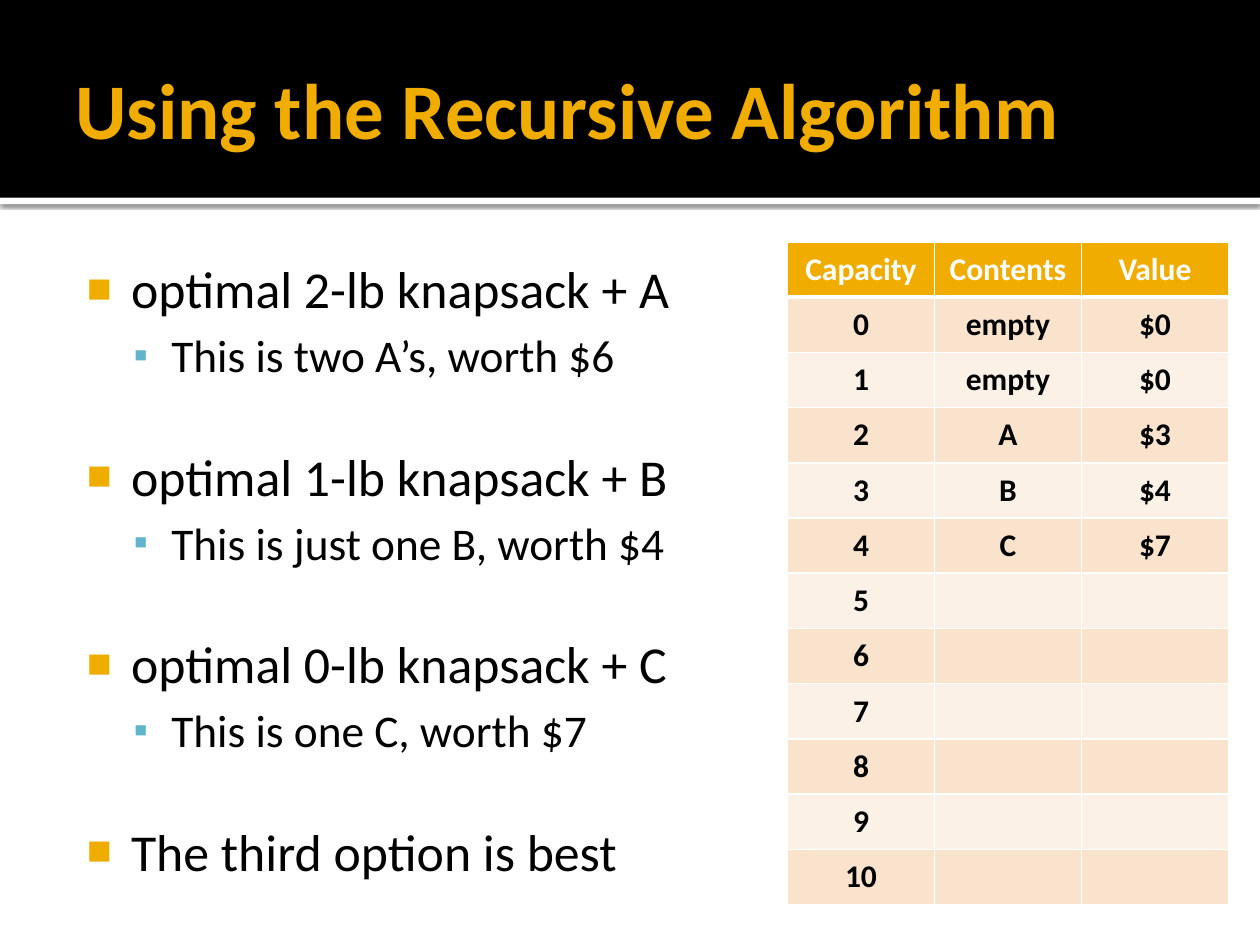
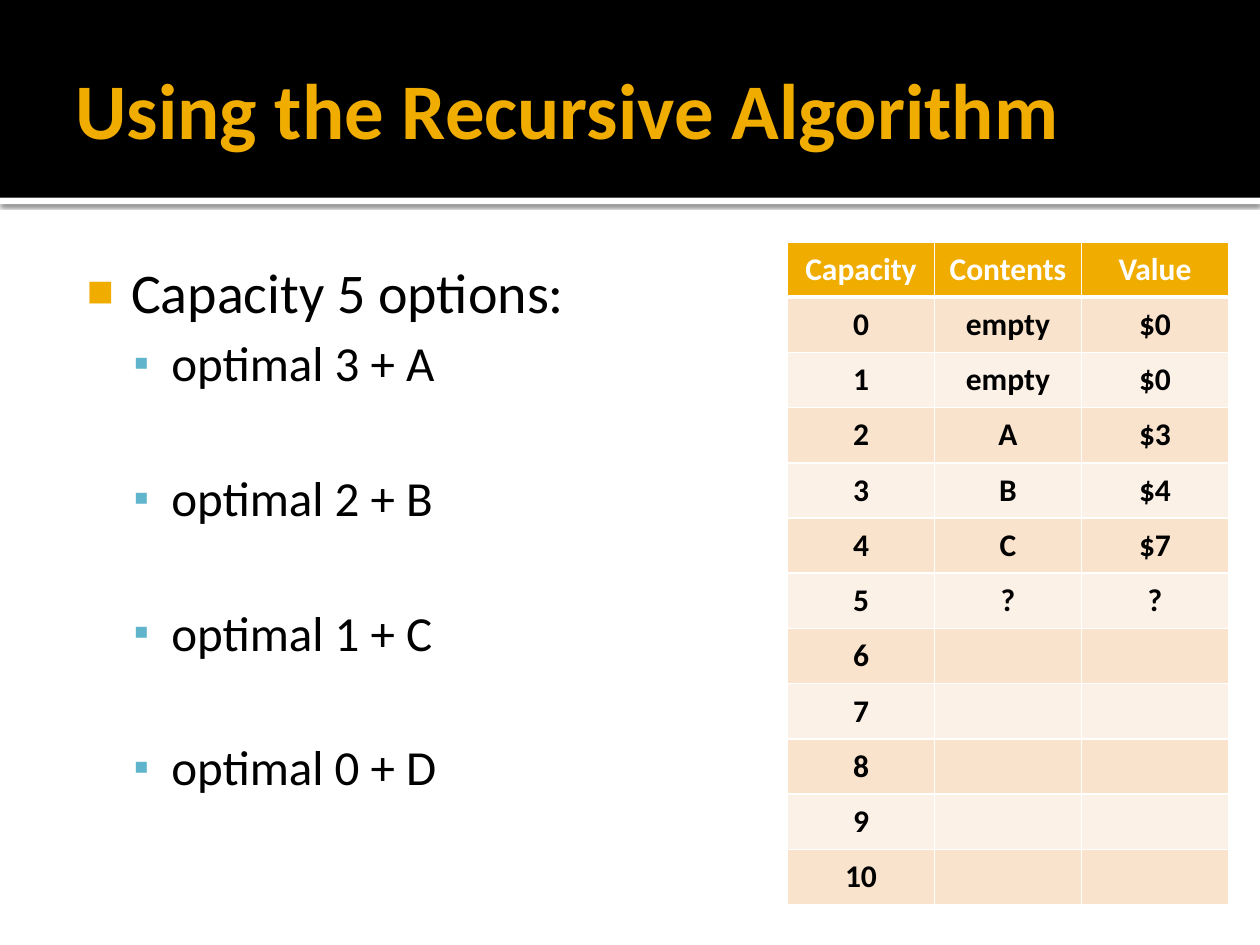
from lxml import etree
from pptx import Presentation
from pptx import util as u
from pptx.dml.color import RGBColor
from pptx.enum import shapes, text
from pptx.oxml import parse_xml
from pptx.oxml.ns import nsdecls, qn

TITLE = "Using the Recursive Algorithm"
FONT = "Calibri"
GOLD, BLUE, BLACK, WHITE = "F0AD00", "60B5CC", "000000", "FFFFFF"
ROW_FILLS = ["F9E3CC", "FCF1E7"]

HEADINGS = ["Capacity", "Contents", "Value"]
CAPACITIES = range(11)
SOLVED = [("empty", "$0"), ("empty", "$0"), ("A", "$3"), ("B", "$4"), ("C", "$7")]

# Per slide: text sizes of the two levels, (level, wording, starts a new group), table entries
SLIDES = [
    {
        "sizes": (29.6, 25.9),
        "group_gap": 36,
        "points": [
            (0, "optimal 2-lb knapsack + A", False),
            (1, "This is two A’s, worth $6", False),
            (0, "optimal 1-lb knapsack + B", True),
            (1, "This is just one B, worth $4", False),
            (0, "optimal 0-lb knapsack + C", True),
            (1, "This is one C, worth $7", False),
            (0, "The third option is best", True),
        ],
        "entries": SOLVED,
    },
    {
        "sizes": (32, 28),
        "group_gap": 38.4,
        "points": [
            (0, "Capacity 5 options:", False),
            (1, "optimal 3 + A", False),
            (1, "optimal 2 + B", True),
            (1, "optimal 1 + C", True),
            (1, "optimal 0 + D", True),
        ],
        "entries": SOLVED + [("?", "?")],
    },
]

# Per level: symbol, colour, size in percent, text indent, hanging indent
BULLETS = [("■", GOLD, 80, 0.48, 0.35), ("▪", BLUE, 90, 0.8, 0.3)]
SUBPOINT_GAP = 0.175  # share of the text size

WIDTH, HEIGHT = 10, 7.5
BAND_HEIGHT, STRIP_HEIGHT = 1.57, 0.05
TITLE_BOX = (0.5, 0.17, 9, 1.37)
BODY_BOX = (0.5, 1.94, 5.67, 5.06)
TABLE_BOX = (6.25, 1.92, 3.5, 5.26)


def rgb(hex_code):
    return RGBColor.from_string(hex_code)


def inches(box):
    return [u.Inches(length) for length in box]


def place(part, box):
    part.left, part.top, part.width, part.height = inches(box)


def set_insets(frame, *insets):
    (frame.margin_left, frame.margin_top,
     frame.margin_right, frame.margin_bottom) = inches(insets)


def style(paragraph, size, color, bold=False):
    font = paragraph.font
    font.name, font.size, font.bold = FONT, u.Pt(size), bold
    font.color.rgb = rgb(color)


def add_band(slide, top, height, color):
    band = slide.shapes.add_shape(
        shapes.MSO_SHAPE.RECTANGLE, *inches((0, top, WIDTH, height)))
    band.shadow.inherit = False
    band.fill.solid()
    band.fill.fore_color.rgb = rgb(color)
    band.line.fill.background()
    return band


def add_bands(slide, layout):
    """Draw the header bands, then hand them to the layout, behind its text."""
    strip = add_band(slide, BAND_HEIGHT, STRIP_HEIGHT, WHITE)
    effects = strip.element.spPr.find(qn("a:effectLst"))
    effects.append(parse_xml(
        f'<a:outerShdw {nsdecls("a")} blurRad="{u.Pt(2.5)}" dist="{u.Pt(0.8)}" '
        f'dir="5400000" algn="tl" rotWithShape="0"><a:srgbClr val="{BLACK}">'
        '<a:alpha val="60000"/></a:srgbClr></a:outerShdw>'))
    header = add_band(slide, 0, BAND_HEIGHT, BLACK)
    for position, band in enumerate((strip, header), start=2):
        layout.shapes.element.insert(position, band.element)


def add_bullet(paragraph, level):
    symbol, color, percent, indent, hanging = BULLETS[level]
    props = paragraph._p.get_or_add_pPr()
    props.set("marL", str(u.Inches(indent)))
    props.set("indent", str(-u.Inches(hanging)))
    bullet_color = etree.SubElement(props, qn("a:buClr"))
    etree.SubElement(bullet_color, qn("a:srgbClr"), val=color)
    etree.SubElement(props, qn("a:buSzPct"), val=str(percent * 1000))
    etree.SubElement(props, qn("a:buChar"), char=symbol)


def fill_title(title):
    title.text_frame.text = TITLE
    set_insets(title.text_frame, 0.1, 0.05, 0.05, 0.05)
    title.text_frame.vertical_anchor = text.MSO_ANCHOR.MIDDLE
    heading = title.text_frame.paragraphs[0]
    heading.alignment = text.PP_ALIGN.LEFT
    style(heading, 45, GOLD, bold=True)


def fill_body(body, points, sizes, group_gap):
    frame = body.text_frame
    frame.text = "\n".join(wording for _, wording, _ in points)
    frame.auto_size = text.MSO_AUTO_SIZE.NONE
    set_insets(frame, 0.06, 0.1, 0.1, 0.05)
    for point, (level, _, new_group) in zip(frame.paragraphs, points):
        size = sizes[level]
        gap = level * SUBPOINT_GAP * size + new_group * group_gap
        point.level = level
        point.space_before = u.Pt(gap)
        add_bullet(point, level)
        style(point, size, BLACK)


def add_borders(cell, top, bottom):
    props = cell._tc.get_or_add_tcPr()
    sides = {"lnL": 1, "lnR": 1, "lnT": top, "lnB": bottom}
    for position, (side, points) in enumerate(sides.items()):
        props.insert(position, parse_xml(
            f'<a:{side} {nsdecls("a")} w="{u.Pt(points)}"><a:solidFill>'
            f'<a:srgbClr val="{WHITE}"/></a:solidFill></a:{side}>'))


def add_knapsack_table(slide, entries):
    unsolved = [("", "")] * (len(CAPACITIES) - len(entries))
    rows = [HEADINGS] + [
        (str(capacity), *entry)
        for capacity, entry in zip(CAPACITIES, entries + unsolved)]
    table = slide.shapes.add_table(
        len(rows), len(HEADINGS), *inches(TABLE_BOX)).table
    for r, row in enumerate(rows):
        is_header = r == 0
        for c, wording in enumerate(row):
            cell = table.cell(r, c)
            cell.text = wording
            cell.vertical_anchor = text.MSO_ANCHOR.MIDDLE
            cell.fill.solid()
            cell.fill.fore_color.rgb = rgb(
                GOLD if is_header else ROW_FILLS[(r - 1) % 2])
            add_borders(cell, top=3 if r == 1 else 1, bottom=3 if is_header else 1)
            entry = cell.text_frame.paragraphs[0]
            entry.alignment = text.PP_ALIGN.CENTER
            style(entry, 18, WHITE if is_header else BLACK, bold=True)


def main():
    deck = Presentation()
    deck.slide_width, deck.slide_height = inches((WIDTH, HEIGHT))
    layout = deck.slide_layouts.get_by_name("Title and Content")
    for placeholder, box in zip(layout.placeholders, (TITLE_BOX, BODY_BOX)):
        place(placeholder, box)

    for number, content in enumerate(SLIDES):
        slide = deck.slides.add_slide(layout)
        if number == 0:
            add_bands(slide, layout)
        fill_title(slide.shapes.title)
        fill_body(slide.placeholders[1], content["points"],
                  content["sizes"], content["group_gap"])
        add_knapsack_table(slide, content["entries"])
    deck.save("out.pptx")


if __name__ == "__main__":
    main()
